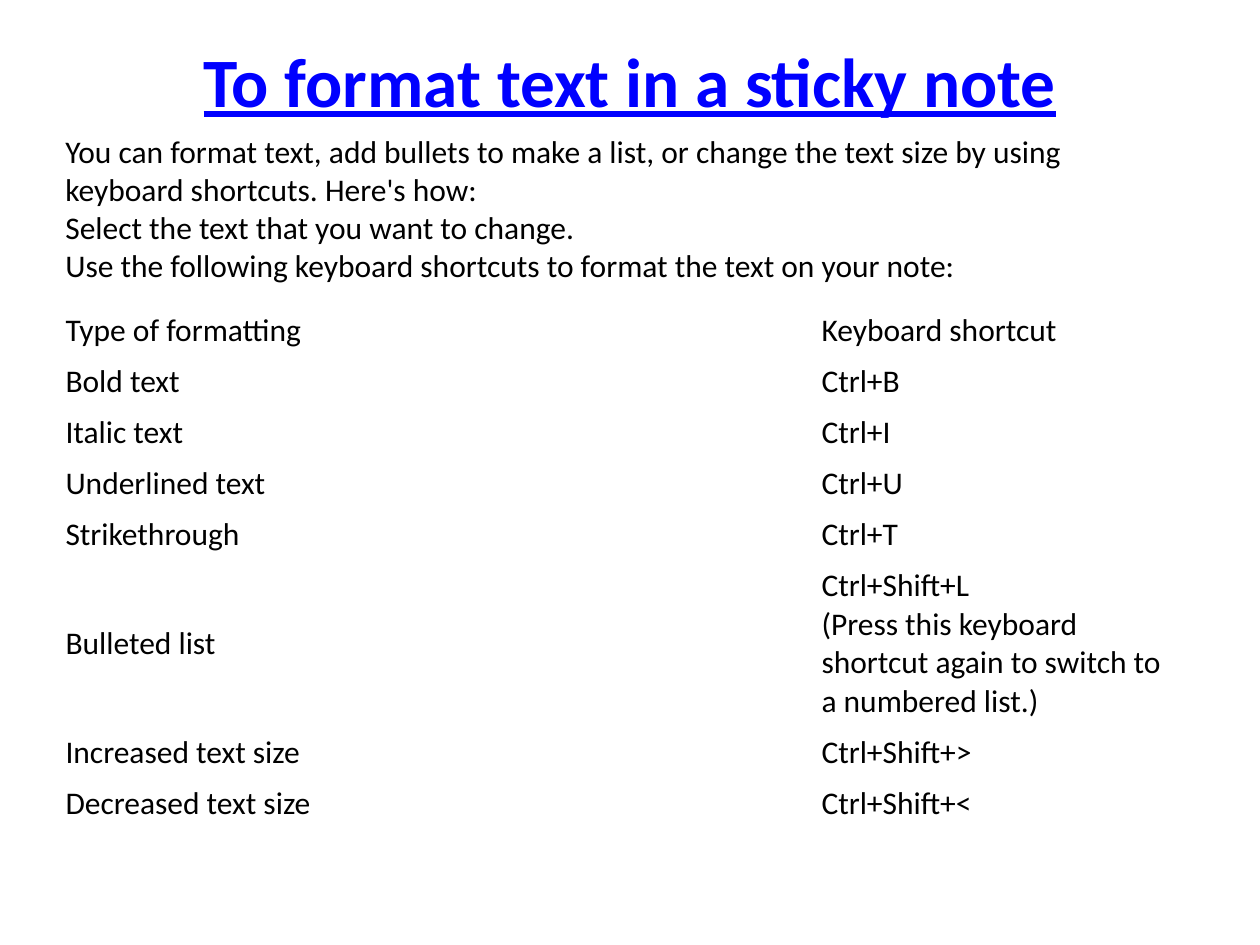
from pptx import Presentation
from pptx.dml.color import RGBColor
from pptx.enum.text import MSO_ANCHOR as Anchor, PP_ALIGN as Align
from pptx.util import Inches, Pt

TITLE = "To format text in a sticky note"
INTRO = [
    "You can format text, add bullets to make a list, or change the text size "
    "by using keyboard shortcuts. Here's how:",
    "Select the text that you want to change.",
    "Use the following keyboard shortcuts to format the text on your note:",
]
SHORTCUTS = [
    ("Type of formatting", ["Keyboard shortcut"]),
    ("Bold text", ["Ctrl+B"]),
    ("Italic text", ["Ctrl+I"]),
    ("Underlined text", ["Ctrl+U"]),
    ("Strikethrough", ["Ctrl+T"]),
    ("Bulleted list", [
        "Ctrl+Shift+L",
        "(Press this keyboard shortcut again to switch to a numbered list.)",
    ]),
    ("Increased text size", ["Ctrl+Shift+>"]),
    ("Decreased text size", ["Ctrl+Shift+<"]),
]
COLUMNS = 3
ROW_HEIGHT = 0.4


def write(frame, lines, size=18, color="000000", bold=False, underline=False):
    """Put each line in its own paragraph of the text frame."""
    for index, line in enumerate(lines):
        paragraph = frame.add_paragraph() if index else frame.paragraphs[0]
        run = paragraph.add_run()
        run.text = line
        font = run.font
        font.name, font.size = "Calibri", Pt(size)
        font.bold, font.underline = bold, underline
        font.color.rgb = RGBColor.from_string(color)


def add_title(slide):
    title = slide.shapes.title
    title.left, title.top = Inches(0.5), Inches(0.3)
    title.width, title.height = Inches(9), Inches(1.25)
    frame = title.text_frame
    frame.vertical_anchor = Anchor.TOP
    frame.margin_top = 0
    write(frame, [TITLE], 39.6, "0000FF", bold=True, underline=True)
    frame.paragraphs[0].alignment = Align.CENTER


def add_shortcut_table(slide):
    table = slide.shapes.add_table(
        len(SHORTCUTS), COLUMNS, Inches(0.42), Inches(2.42),
        Inches(9), Inches(ROW_HEIGHT * len(SHORTCUTS))).table
    table.first_row = table.horz_banding = False
    for row, (label, keys) in zip(table.rows, SHORTCUTS):
        for cell, lines in zip(row.cells, ([label], [], keys)):
            cell.fill.background()
            cell.vertical_anchor = Anchor.MIDDLE
            write(cell.text_frame, lines)
    bulleted_row = table.rows[5]
    bulleted_row.height = Inches(1.32)


def add_intro(slide):
    box = slide.shapes.add_textbox(
        Inches(0.42), Inches(1), Inches(9.08), Inches(1.62))
    box.text_frame.word_wrap = True
    write(box.text_frame, INTRO)


def main():
    presentation = Presentation()
    presentation.slide_width, presentation.slide_height = Inches(10), Inches(7.5)
    title_only = presentation.slide_layouts[5]
    slide = presentation.slides.add_slide(title_only)
    add_title(slide)
    add_shortcut_table(slide)
    add_intro(slide)
    presentation.save("out.pptx")


if __name__ == "__main__":
    main()
